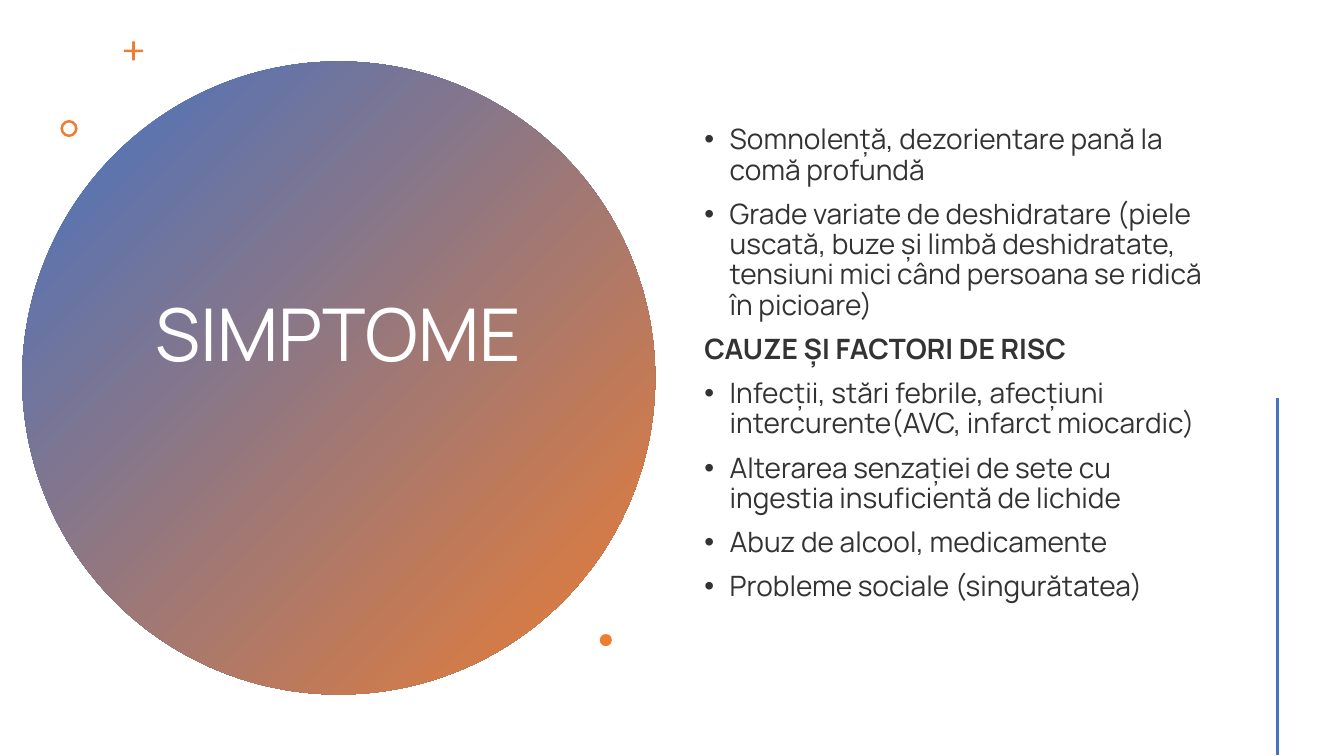
import pptx
import pptx.dml.color
import pptx.enum.shapes
import pptx.enum.text
import pptx.oxml.ns
import pptx.util
from lxml import etree

CELL = pptx.util.Inches(0.1)
COLUMNS, ROWS = 133.33, 75
FONT = "Manrope"
BLUE, ORANGE, WHITE, INK = "4472C4", "ED7D31", "FFFFFF", "333333"
SHAPES = pptx.enum.shapes.MSO_SHAPE
ALIGN = pptx.enum.text.PP_ALIGN

SYMPTOMS = [
    "Somnolență, dezorientare pană la comă profundă",
    "Grade variate de deshidratare (piele uscată, buze și limbă deshidratate, "
    "tensiuni mici când persoana se ridică în picioare)",
]
CAUSES_HEADING = "CAUZE ȘI FACTORI DE RISC"
CAUSES = [
    "Infecții, stări febrile, afecțiuni intercurente(AVC, infarct miocardic)",
    "Alterarea senzației de sete cu ingestia insuficientă de lichide",
    "Abuz de alcool, medicamente",
    "Probleme sociale (singurătatea)",
]


def color(hex_string):
    return pptx.dml.color.RGBColor.from_string(hex_string)


def grid(*cells):
    return [round(cell * CELL) for cell in cells]


def add_ornament(slide, preset, left, top, size, thickness=None):
    ornament = slide.shapes.add_shape(preset, *grid(left, top, size, size))
    ornament.shadow.inherit = False
    ornament.line.fill.background()
    ornament.fill.solid()
    ornament.fill.fore_color.rgb = color(ORANGE)
    if thickness is not None:
        ornament.adjustments[0] = thickness
    return ornament


def add_gradient_disc(slide, left, top, size):
    disc = add_ornament(slide, SHAPES.OVAL, left, top, size)
    disc.fill.gradient()
    disc.fill.gradient_angle = 315
    for stop, hue in zip(disc.fill.gradient_stops, (BLUE, ORANGE)):
        stop.color.rgb = color(hue)


def add_text_area(slide, left, top, width, height, bottom_inset):
    area = slide.shapes.add_textbox(*grid(left, top, width, height)).text_frame
    area.word_wrap = True
    area.vertical_anchor = pptx.enum.text.MSO_ANCHOR.MIDDLE
    area.margin_bottom = grid(bottom_inset)[0]
    return area


def style_paragraph(paragraph, size, hue, align=ALIGN.LEFT, bold=False):
    paragraph.alignment = align
    paragraph.line_spacing = 0.9
    for run in paragraph.runs:
        run.font.name = FONT
        run.font.size = pptx.util.Pt(size)
        run.font.bold = bold
        run.font.color.rgb = color(hue)


def add_bullet(paragraph):
    properties = paragraph._p.get_or_add_pPr()
    indent = grid(2.5)[0]
    properties.set("marL", str(indent))
    properties.set("indent", str(-indent))
    typeface = etree.SubElement(properties, pptx.oxml.ns.qn("a:buFont"))
    typeface.set("typeface", "Arial")
    bullet = etree.SubElement(properties, pptx.oxml.ns.qn("a:buChar"))
    bullet.set("char", "•")


def add_title(slide, wording):
    area = add_text_area(slide, 13.6, 14.1, 39.9, 46.7, 8.3)
    area.text = wording
    style_paragraph(area.paragraphs[0], 52, WHITE, ALIGN.CENTER)


def add_findings(slide):
    area = add_text_area(slide, 68.9, 5.7, 52.2, 63.8, 3.4)
    findings = [*SYMPTOMS, CAUSES_HEADING, *CAUSES]
    for order, finding in enumerate(findings):
        paragraph = area.add_paragraph() if order else area.paragraphs[0]
        paragraph.text = finding
        is_heading = finding == CAUSES_HEADING
        if not is_heading:
            add_bullet(paragraph)
        style_paragraph(paragraph, 20, INK, bold=is_heading)
        if order:
            paragraph.space_before = pptx.util.Pt(10)


def add_accent_line(slide, column, top, bottom):
    accent = slide.shapes.add_connector(
        pptx.enum.shapes.MSO_CONNECTOR.STRAIGHT, *grid(column, top, column, bottom)
    )
    accent.line.color.rgb = color(BLUE)
    accent.line.width = pptx.util.Pt(2)
    etree.SubElement(accent._element.spPr, pptx.oxml.ns.qn("a:effectLst"))


def main():
    deck = pptx.Presentation()
    deck.slide_width, deck.slide_height = grid(COLUMNS, ROWS)
    slide = deck.slides.add_slide(deck.slide_layouts[6])
    add_gradient_disc(slide, 2.2, 6.1, 62.8)
    add_title(slide, "SIMPTOME")
    add_ornament(slide, SHAPES.CROSS, 12.3, 4.1, 1.9, 0.43)
    add_ornament(slide, SHAPES.DONUT, 6, 11.9, 1.7, 0.15)
    add_findings(slide)
    add_ornament(slide, SHAPES.OVAL, 59.5, 62.9, 1.2)
    add_accent_line(slide, 126.7, 39.5, 74.9)
    deck.save("out.pptx")


if __name__ == "__main__":
    main()
